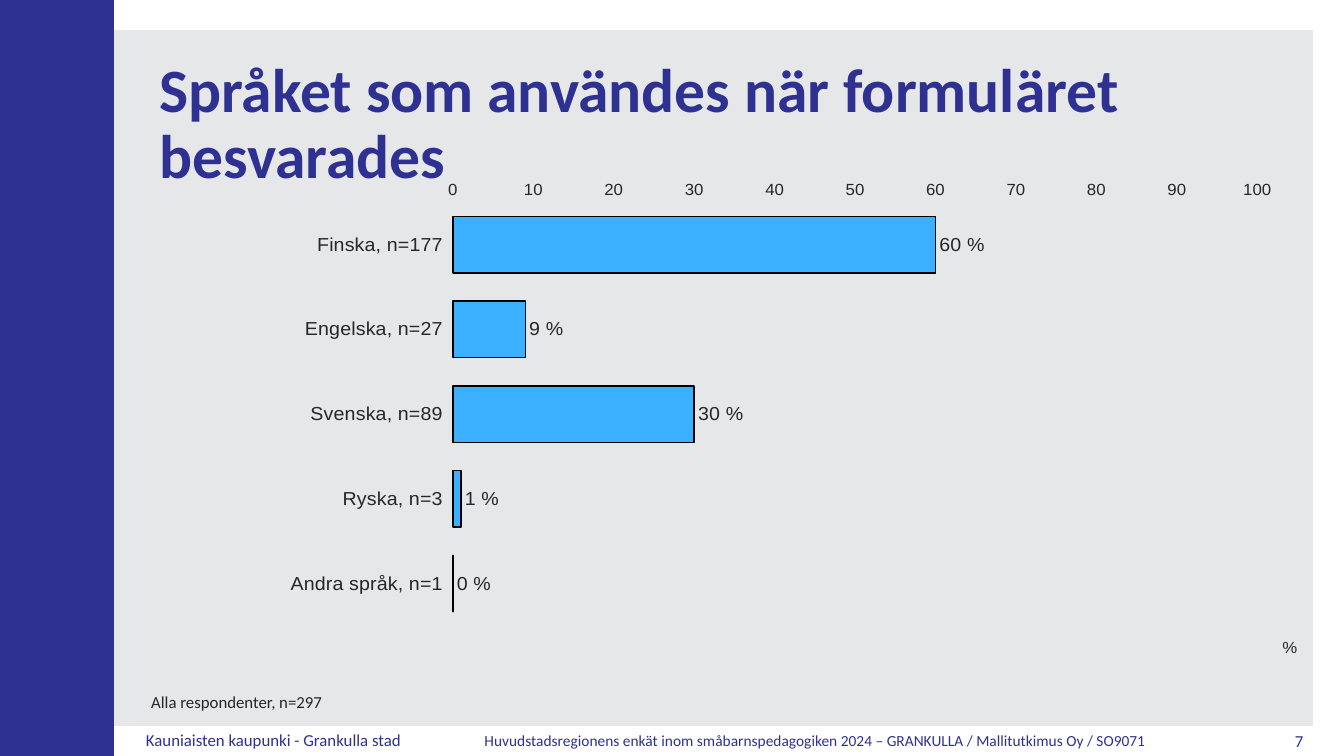
from dataclasses import dataclass

from lxml.etree import SubElement
from pptx import Presentation
from pptx.chart.data import CategoryChartData
from pptx.dml.color import RGBColor
from pptx.enum.chart import XL_AXIS_CROSSES as Crosses
from pptx.enum.chart import XL_CHART_TYPE as ChartType
from pptx.enum.chart import XL_LABEL_POSITION as LabelPosition
from pptx.enum.chart import XL_TICK_LABEL_POSITION as TickLabel
from pptx.enum.chart import XL_TICK_MARK as TickMark
from pptx.enum.shapes import MSO_SHAPE as Shape
from pptx.enum.text import MSO_ANCHOR as Anchor
from pptx.enum.text import MSO_AUTO_SIZE as AutoSize
from pptx.enum.text import PP_ALIGN as Align
from pptx.oxml.ns import qn
from pptx.util import Cm, Pt


@dataclass(frozen=True)
class Theme:
    navy: RGBColor = RGBColor.from_string("2E3192")
    panel: RGBColor = RGBColor.from_string("E6E7E8")
    bar: RGBColor = RGBColor.from_string("3BB0FF")
    outline: RGBColor = RGBColor.from_string("000000")
    ink: RGBColor = RGBColor.from_string("262626")
    text_font: str = "Calibri"
    chart_font: str = "Arial"
    title_size: int = 44
    label_size: int = 14
    note_size: int = 12
    footer_size: int = 11


theme = Theme()

# Content; every area is left, top, width, height in cm
TITLE = "Språket som användes när formuläret besvarades"
TITLE_AREA = (3.76, 1.32, 29.21, 3.68)
LANGUAGES = {
    "Finska, n=177": 60,
    "Engelska, n=27": 9,
    "Svenska, n=89": 30,
    "Ryska, n=3": 1,
    "Andra språk, n=1": 0,
}
CHART_AREA = (3.76, 4.57, 29.21, 12.09)
PLOT_LAYOUT = {"layoutTarget": "inner", "xMode": "edge", "yMode": "edge",
               "x": 0.262, "y": 0.012, "w": 0.694, "h": 0.92}
UNIT_LAYOUT = {"xMode": "edge", "yMode": "edge", "x": 0.975, "y": 0.95}
BACKDROP = [
    ((0.76, 0.76, 32.33, 17.53), theme.panel),
    ((0, 0, 2.87, 19.05), theme.navy),
]
NOTES = [
    ("Kauniaisten kaupunki - Grankulla stad", (3.43, 18.36, 7.32, 0.71),
     theme.note_size, theme.navy, {"line_spacing": 0.8}, Anchor.TOP),
    ("Huvudstadsregionens enkät inom småbarnspedagogiken 2024 – "
     "GRANKULLA / Mallitutkimus Oy / SO9071", (11.96, 18.34, 17.91, 0.71),
     theme.footer_size, theme.navy, {"line_spacing": 0.9}, Anchor.TOP),
    ("Alla respondenter, n=297", (3.56, 17.37, 23.32, 0.71),
     theme.note_size, theme.ink, {"line_spacing": 0.9}, Anchor.TOP),
    ("7", (31.22, 18.29, 1.88, 0.76),
     theme.note_size, theme.navy, {"alignment": Align.RIGHT}, Anchor.MIDDLE),
]


def assign(target, values):
    for name, value in values.items():
        setattr(target, name, value)


def in_cm(area):
    return [Cm(length) for length in area]


def write(frame, text, size, color, para_format, anchor, bold=False):
    assign(frame, {"word_wrap": True, "auto_size": AutoSize.NONE,
                   "vertical_anchor": anchor})
    para = frame.paragraphs[0]
    assign(para, para_format)
    span = para.add_run()
    span.text = text
    assign(span.font, {"name": theme.text_font, "size": Pt(size), "bold": bold})
    span.font.color.rgb = color


def set_layout(parent, values, index):
    layout = parent.find(qn("c:layout"))
    if layout is None:
        layout = SubElement(parent, qn("c:layout"))
        parent.insert(index, layout)
    manual = SubElement(layout, qn("c:manualLayout"))
    for name, value in values.items():
        SubElement(manual, qn(f"c:{name}")).set("val", str(value))


def add_language_chart(page):
    data = CategoryChartData()
    data.categories = list(LANGUAGES)
    data.add_series("Series 1", list(LANGUAGES.values()))
    chart = page.shapes.add_chart(
        ChartType.BAR_CLUSTERED, *in_cm(CHART_AREA), data).chart
    assign(chart, {"has_legend": False, "has_title": False})
    assign(chart.font, {"name": theme.chart_font, "size": Pt(theme.label_size)})
    chart.font.color.rgb = theme.ink

    # Bars and their labels
    plot = chart.plots[0]
    assign(plot, {"gap_width": 50, "vary_by_categories": False,
                  "has_data_labels": True})
    assign(plot.data_labels, {
        "show_value": True, "position": LabelPosition.OUTSIDE_END,
        "number_format": "#,##0\\ [$%]", "number_format_is_linked": False})
    bars = plot.series[0].format
    bars.fill.solid()
    bars.fill.fore_color.rgb = theme.bar
    bars.line.color.rgb = theme.outline
    bars.line.width = Pt(1)

    # Axes: first language on top, scale at the bottom
    languages, scale = chart.category_axis, chart.value_axis
    for axis in (languages, scale):
        assign(axis, {"has_major_gridlines": False,
                      "major_tick_mark": TickMark.NONE,
                      "minor_tick_mark": TickMark.NONE})
        axis.format.line.fill.background()
    assign(languages, {"reverse_order": True, "crosses": Crosses.MAXIMUM,
                       "tick_label_position": TickLabel.LOW})
    assign(scale, {"minimum_scale": 0, "maximum_scale": 100, "major_unit": 10})
    assign(scale.tick_labels, {"number_format": "General",
                               "number_format_is_linked": False})
    scale.tick_labels.font.size = Pt(theme.note_size)

    # Unit beside the scale
    unit = scale.axis_title
    unit.text_frame.text = "%"
    span = unit.text_frame.paragraphs[0].runs[0]
    assign(span.font, {"name": theme.chart_font, "bold": False,
                       "size": Pt(theme.note_size)})
    span.font.color.rgb = theme.ink
    body = unit.text_frame._txBody.find(qn("a:bodyPr"))
    body.set("rot", "0")
    body.set("vert", "horz")
    set_layout(unit._element, UNIT_LAYOUT, 1)
    set_layout(chart._chartSpace.find(".//" + qn("c:plotArea")), PLOT_LAYOUT, 0)


def main():
    deck = Presentation()
    assign(deck, {"slide_width": Cm(33.87), "slide_height": Cm(19.05)})
    page = deck.slides.add_slide(deck.slide_layouts[5])

    # Backdrop, placed behind the title
    title = page.shapes.title
    for area, color in BACKDROP:
        block = page.shapes.add_shape(Shape.RECTANGLE, *in_cm(area))
        block.shadow.inherit = False
        block.fill.solid()
        block.fill.fore_color.rgb = color
        block.line.fill.background()
        title._element.addprevious(block._element)

    # Title
    assign(title, dict(zip(("left", "top", "width", "height"), in_cm(TITLE_AREA))))
    write(title.text_frame, TITLE, theme.title_size, theme.navy,
          {"line_spacing": 0.9, "alignment": Align.LEFT}, Anchor.MIDDLE, bold=True)

    add_language_chart(page)

    # Base note, footers and page number
    for text, area, size, color, para_format, anchor in NOTES:
        box = page.shapes.add_textbox(*in_cm(area))
        write(box.text_frame, text, size, color, para_format, anchor)

    deck.save("out.pptx")


if __name__ == "__main__":
    main()
